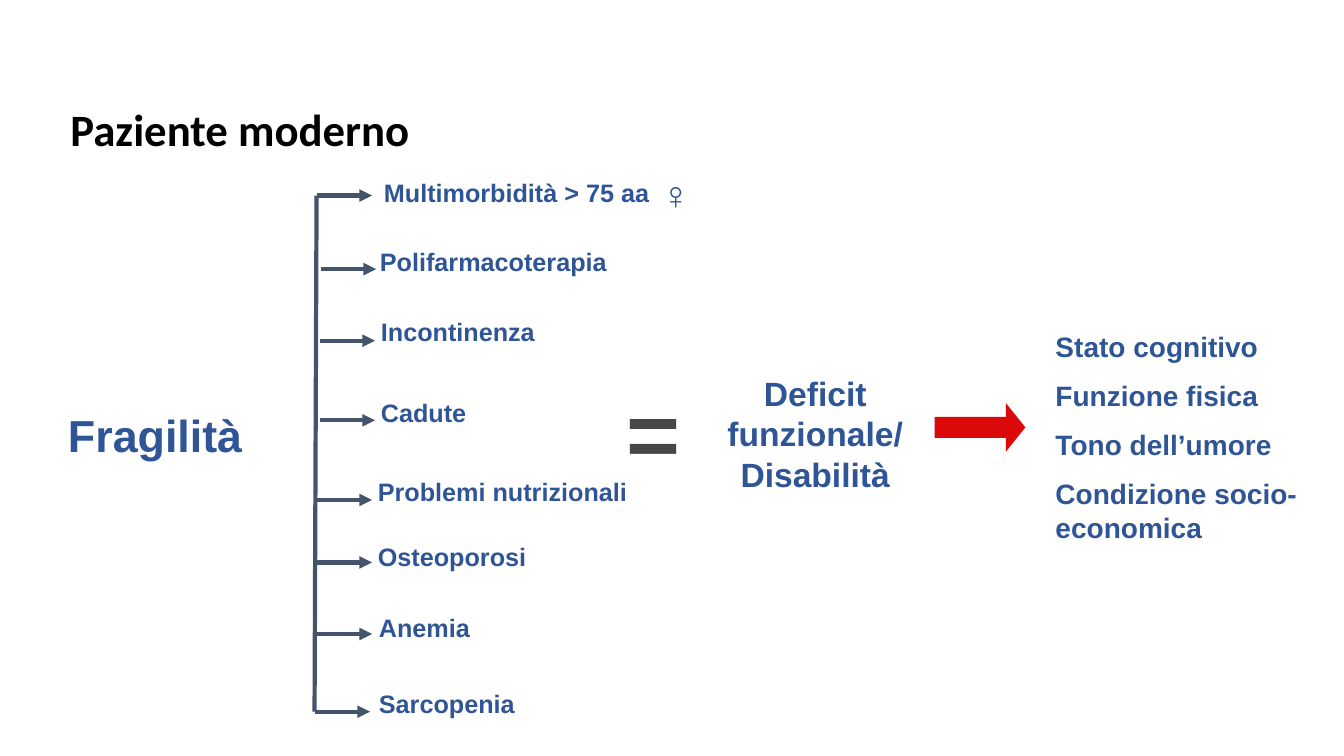
from dataclasses import dataclass

from lxml.etree import SubElement
from pptx import Presentation
from pptx.dml.color import RGBColor
from pptx.enum.shapes import MSO_CONNECTOR, MSO_SHAPE
from pptx.enum.text import MSO_ANCHOR, PP_ALIGN
from pptx.oxml.ns import qn
from pptx.util import Emu, Pt

TITLE = "Paziente moderno"
CAUSE = "Fragilità"
# label, label left, label top, label width, arrow left, arrow height on slide
FACTORS = [
    ("Multimorbidità > 75 aa", 371, 171, 511, 314, 194),
    ("Polifarmacoterapia", 367, 239, 400, 318, 267),
    ("Incontinenza", 368, 309, 333, 317, 338),
    ("Cadute", 368, 389, 200, 317, 417),
    ("Problemi nutrizionali", 365, 468, 556, 314, 496),
    ("Osteoporosi", 365, 532, 467, 314, 558),
    ("Anemia", 366, 603, 243, 314, 629),
    ("Sarcopenia", 366, 678, 245, 312, 706),
]
EFFECT = ["Deficit funzionale/", "Disabilità"]
DOMAINS = ["Stato cognitivo", "Funzione fisica", "Tono dell’umore",
           "Condizione socio-economica"]

ARROW_LENGTH = 55
LABEL_HEIGHT = 40


@dataclass(frozen=True)
class Theme:
    font: str = "Arial"
    title_font: str = "Calibri"
    black: str = "000000"
    blue: str = "2F5597"
    slate: str = "44546A"
    grey: str = "474747"
    red: str = "DB090A"
    heading: int = 32
    label: int = 18
    domain: int = 20
    effect: int = 24
    female: int = 28
    equals: int = 66
    line: int = 3


THEME = Theme()


def px(n):
    """One px is a hundredth of an inch."""
    return Emu(n * 9144)


def add_text(slide, text, left, top, width, height, *, size, font=THEME.font,
             color=THEME.blue, bold=True, align=PP_ALIGN.LEFT,
             anchor=MSO_ANCHOR.TOP, gap=0, spacing=None):
    """Add a text box; a list gives one paragraph per item, gap pt apart."""
    tf = slide.shapes.add_textbox(px(left), px(top), px(width), px(height)).text_frame
    tf.word_wrap = True
    tf.vertical_anchor = anchor
    for i, line in enumerate([text] if isinstance(text, str) else text):
        p = tf.add_paragraph() if i else tf.paragraphs[0]
        p.alignment = align
        p.space_before = Pt(gap if i else 0)
        if spacing:
            p.line_spacing = spacing
        r = p.add_run()
        r.text = line
        r.font.name = font
        r.font.size = Pt(size)
        r.font.bold = bold
        r.font.color.rgb = RGBColor.from_string(color)


def add_line(slide, x1, y1, x2, y2, arrow=False):
    line = slide.shapes.add_connector(MSO_CONNECTOR.STRAIGHT,
                                      px(x1), px(y1), px(x2), px(y2))
    line.line.width = Pt(THEME.line)
    line.line.color.rgb = RGBColor.from_string(THEME.slate)
    if arrow:
        SubElement(line.line._get_or_add_ln(), qn("a:tailEnd"), type="triangle")
    SubElement(line._element.spPr, qn("a:effectLst"))


def add_factors(slide):
    """Draw the bracket from the first arrow to the last, with its labels."""
    first, last = FACTORS[0], FACTORS[-1]
    add_line(slide, *first[4:], *last[4:])
    for label, left, top, width, x, y in FACTORS:
        add_text(slide, label, left, top, width, LABEL_HEIGHT, size=THEME.label)
        add_line(slide, x, y, x + ARROW_LENGTH, y, arrow=True)


def add_red_arrow(slide):
    sp = slide.shapes.add_shape(MSO_SHAPE.RIGHT_ARROW,
                                px(927), px(400), px(90), px(48))
    sp.adjustments[0], sp.adjustments[1] = 0.43, 0.4
    sp.fill.solid()
    sp.fill.fore_color.rgb = RGBColor.from_string(THEME.red)
    sp.line.fill.background()
    sp.shadow.inherit = False


def main():
    prs = Presentation()
    prs.slide_width, prs.slide_height = px(1333), px(750)
    slide = prs.slides.add_slide(prs.slide_layouts[6])

    add_text(slide, TITLE, 60, 90, 930, 81, size=THEME.heading, spacing=0.9,
             font=THEME.title_font, color=THEME.black, anchor=MSO_ANCHOR.MIDDLE)
    add_text(slide, CAUSE, -28, 400, 364, 64, size=THEME.heading,
             align=PP_ALIGN.CENTER)
    add_factors(slide)
    add_text(slide, " ♀", 635, 164, 72, 57, size=THEME.female, bold=False)
    add_text(slide, "=", 541, 367, 215, 121, size=THEME.equals,
             color=THEME.grey, align=PP_ALIGN.CENTER)
    add_text(slide, EFFECT, 659, 365, 299, 131, size=THEME.effect,
             align=PP_ALIGN.CENTER)
    add_red_arrow(slide)
    add_text(slide, DOMAINS, 1037, 322, 315, 229, size=THEME.domain, gap=11)
    prs.save("out.pptx")


if __name__ == "__main__":
    main()
